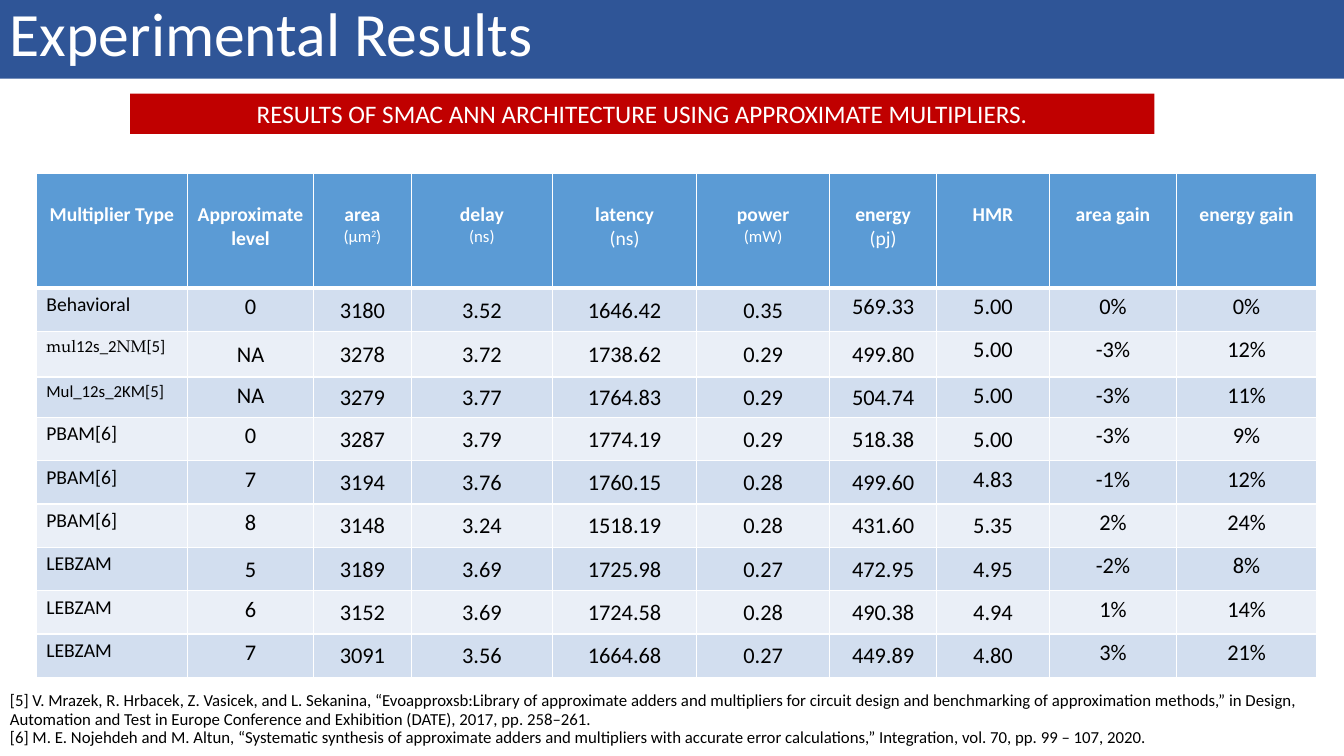
from dataclasses import dataclass

from lxml import etree
from pptx import Presentation
from pptx.dml.color import RGBColor as RGB
from pptx.enum.shapes import MSO_SHAPE as SHAPE
from pptx.enum.text import MSO_ANCHOR as ANCHOR, PP_ALIGN as ALIGN
from pptx.oxml.ns import qn
from pptx.util import Inches, Pt


@dataclass(frozen=True)
class Theme:
    font: str = "Calibri"
    serif: str = "TeX Gyre Pagella"
    white: str = "FFFFFF"
    black: str = "000000"
    title_bar: str = "2F5597"
    banner: str = "C00000"
    header: str = "5B9BD5"
    bands: tuple = ("D2DEEF", "EAEFF7")
    title_size: int = 44
    banner_size: int = 18
    value_size: int = 16
    label_size: int = 14
    small_size: int = 12


THEME = Theme()

COL_WIDTHS = [1.5, 1.25, 0.97, 1.4, 1.43, 1.32, 1.06, 1.12, 1.26, 1.39]
ROW_HEIGHTS = [1.14, 0.43, 0.45, 0.4] + [0.43] * 6

# Heading, unit, unit size
HEADERS = [
    ("Multiplier Type", "", 0),
    ("Approximate level", "", 0),
    ("area", "(μm2)", THEME.small_size),
    ("delay", "(ns)", THEME.small_size),
    ("latency", "(ns)", THEME.label_size),
    ("power", "(mW)", THEME.small_size),
    ("energy", "(pj)", THEME.label_size),
    ("HMR", "", 0),
    ("area gain", "", 0),
    ("energy gain", "", 0),
]

# Values, then the first and last vertically centred column
RESULTS = [
    ("Behavioral 0 3180 3.52 1646.42 0.35 569.33 5.00 0% 0%", 2, 5),
    ("mul12s_2NM[5] NA 3278 3.72 1738.62 0.29 499.80 5.00 -3% 12%", 1, 6),
    ("Mul_12s_2KM[5] NA 3279 3.77 1764.83 0.29 504.74 5.00 -3% 11%", 2, 6),
    ("PBAM[6] 0 3287 3.79 1774.19 0.29 518.38 5.00 -3% 9%", 2, 7),
    ("PBAM[6] 7 3194 3.76 1760.15 0.28 499.60 4.83 -1% 12%", 2, 6),
    ("PBAM[6] 8 3148 3.24 1518.19 0.28 431.60 5.35 2% 24%", 2, 7),
    ("LEBZAM 5 3189 3.69 1725.98 0.27 472.95 4.95 -2% 8%", 1, 7),
    ("LEBZAM 6 3152 3.69 1724.58 0.28 490.38 4.94 1% 14%", 2, 7),
    ("LEBZAM 7 3091 3.56 1664.68 0.27 449.89 4.80 3% 21%", 2, 7),
]

REFERENCES = [
    "[5] V. Mrazek, R. Hrbacek, Z. Vasicek, and L. Sekanina, “Evoapproxsb:Library of "
    "approximate adders and multipliers for circuit design and benchmarking of "
    "approximation methods,” in Design, Automation and Test in Europe Conference and "
    "Exhibition (DATE), 2017, pp. 258–261.",
    "[6] M. E. Nojehdeh and M. Altun, “Systematic synthesis of approximate adders and "
    "multipliers with accurate error calculations,” Integration, vol. 70, "
    "pp. 99 – 107, 2020.",
]


def style(p, size, color, bold=False, align=ALIGN.LEFT):
    p.alignment = align
    p.font.name = THEME.font
    p.font.size = Pt(size)
    p.font.bold = bold
    p.font.color.rgb = RGB.from_string(color)


def add_bar(slide, box, text, fill, size, align):
    sp = slide.shapes.add_shape(SHAPE.RECTANGLE, *map(Inches, box))
    sp.shadow.inherit = False
    sp.fill.solid()
    sp.fill.fore_color.rgb = RGB.from_string(fill)
    sp.line.fill.background()
    tf = sp.text_frame
    tf.word_wrap = True
    tf.vertical_anchor = ANCHOR.MIDDLE
    p = tf.paragraphs[0]
    p.text = text
    style(p, size, THEME.white, align=align)
    return p


def format_cell(cell, fill, bottom_width=1):
    # Borders come before the fill in the cell properties
    tc_pr = cell._tc.get_or_add_tcPr()
    for side, width in (("L", 1), ("R", 1), ("T", 1), ("B", bottom_width)):
        ln = etree.SubElement(tc_pr, qn(f"a:ln{side}"), w=str(Pt(width)))
        line_fill = etree.SubElement(ln, qn("a:solidFill"))
        etree.SubElement(line_fill, qn("a:srgbClr"), val=THEME.white)
    cell.fill.solid()
    cell.fill.fore_color.rgb = RGB.from_string(fill)


def fill_header(cell, heading, unit, unit_size):
    format_cell(cell, THEME.header, bottom_width=3)
    cell.margin_top = Inches(0.29)
    tf = cell.text_frame
    p = tf.paragraphs[0]
    p.text = heading
    style(p, THEME.label_size, THEME.white, True, ALIGN.CENTER)
    if unit:
        p = tf.add_paragraph()
        style(p, unit_size, THEME.white, False, ALIGN.CENTER)
        base, exponent, tail = unit.partition("2")
        for text in filter(None, (base, exponent, tail)):
            r = p.add_run()
            r.text = text
            if text == exponent:
                r._r.get_or_add_rPr().set("baseline", "30000")


def fill_label(p, label):
    size = THEME.small_size if "12s" in label else THEME.label_size
    style(p, size, THEME.black)
    if label.startswith("mul"):
        fonts = (THEME.serif, THEME.font) * 2
        for text, font in zip(("mul", "12s_2", "NM", "[5]"), fonts):
            r = p.add_run()
            r.text = text
            r.font.name = font
    else:
        p.text = label


def fill_value(cell, text, centred):
    p = cell.text_frame.paragraphs[0]
    p.text = text
    style(p, THEME.value_size, THEME.black, align=ALIGN.CENTER)
    if centred:
        cell.vertical_anchor = ANCHOR.MIDDLE
        cell.margin_left = cell.margin_right = cell.margin_top = Inches(0.01)
        cell.margin_bottom = 0


def add_results_table(slide, left, top):
    box = (left, top, sum(COL_WIDTHS), sum(ROW_HEIGHTS))
    table = slide.shapes.add_table(
        len(ROW_HEIGHTS), len(COL_WIDTHS), *map(Inches, box)).table
    for col, width in zip(table.columns, COL_WIDTHS):
        col.width = Inches(width)
    for row, height in zip(table.rows, ROW_HEIGHTS):
        row.height = Inches(height)

    for col, header in enumerate(HEADERS):
        fill_header(table.cell(0, col), *header)
    for row, (values, first, last) in enumerate(RESULTS, 1):
        for col, text in enumerate(values.split()):
            cell = table.cell(row, col)
            format_cell(cell, THEME.bands[(row - 1) % 2])
            if col == 0:
                fill_label(cell.text_frame.paragraphs[0], text)
            else:
                fill_value(cell, text, first <= col <= last)


def add_references(slide, box):
    tf = slide.shapes.add_textbox(*map(Inches, box)).text_frame
    tf.word_wrap = True
    for i, reference in enumerate(REFERENCES):
        p = tf.add_paragraph() if i else tf.paragraphs[0]
        p.text = reference
        p.line_spacing = 0.9
        style(p, THEME.small_size, THEME.black)


def main():
    prs = Presentation()
    prs.slide_width, prs.slide_height = Inches(13.33), Inches(7.5)
    slide = prs.slides.add_slide(prs.slide_layouts[6])

    # Title and banner
    title = add_bar(slide, (0, -0.06, 13.33, 0.84), "Experimental Results",
                    THEME.title_bar, THEME.title_size, ALIGN.LEFT)
    title.line_spacing = 0.9
    add_bar(slide, (1.29, 0.93, 10.16, 0.4),
            "RESULTS OF SMAC ANN ARCHITECTURE USING APPROXIMATE MULTIPLIERS.",
            THEME.banner, THEME.banner_size, ALIGN.CENTER)

    # Results and sources
    add_results_table(slide, 0.36, 1.72)
    add_references(slide, (0, 6.82, 13.33, 0.69))
    prs.save("out.pptx")


if __name__ == "__main__":
    main()
